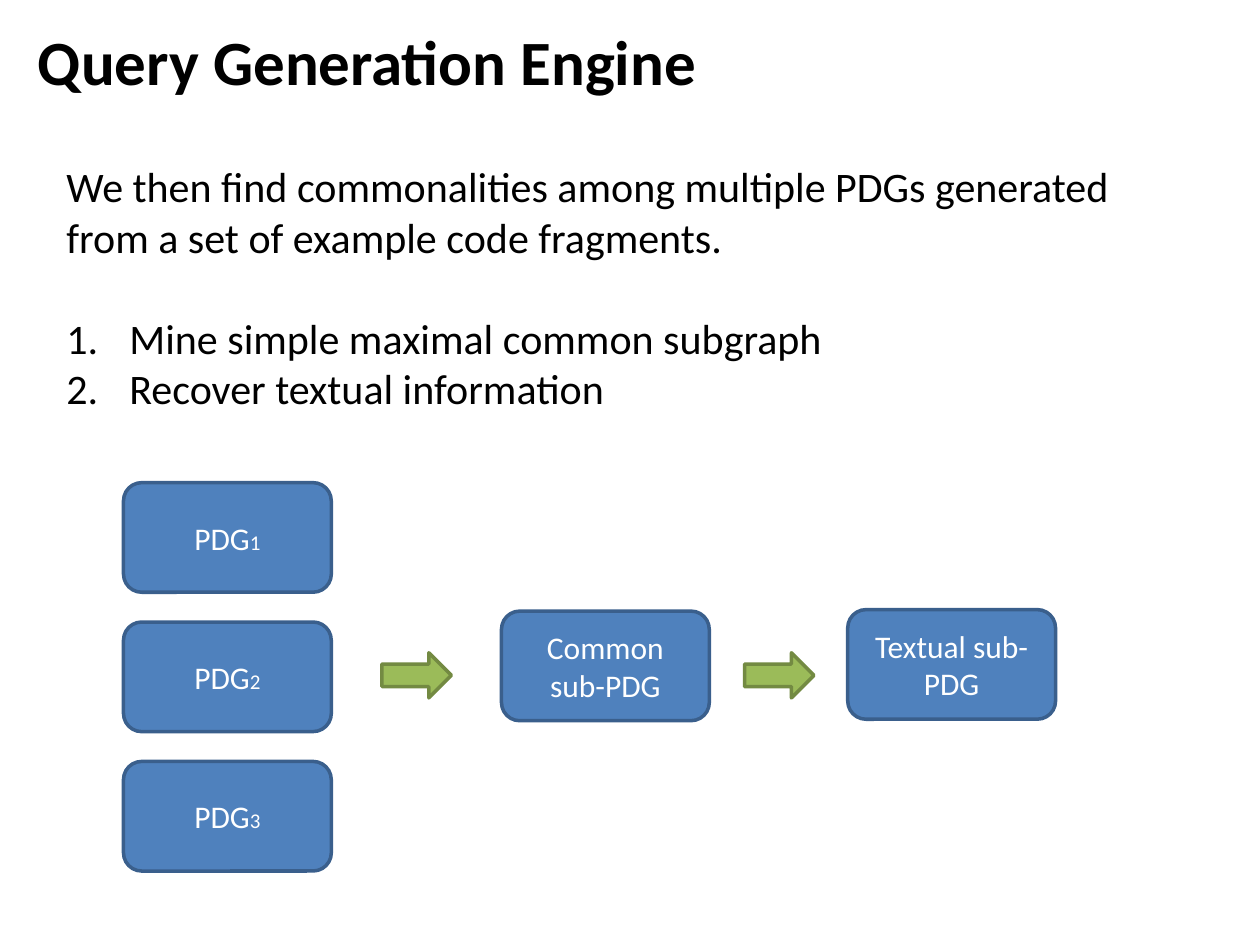
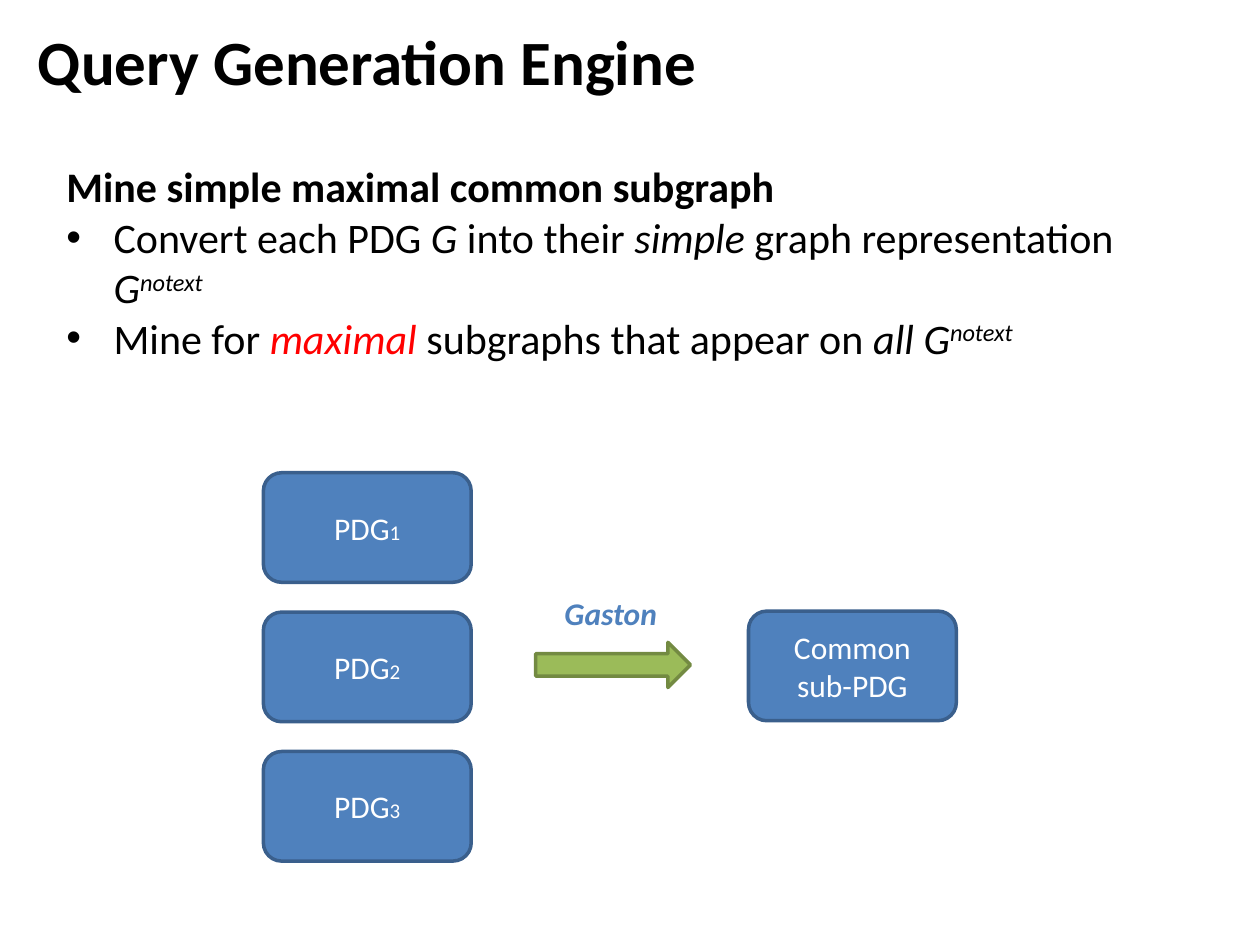
from lxml.etree import SubElement
from pptx import Presentation
from pptx.dml.color import RGBColor
from pptx.enum.shapes import MSO_SHAPE as Shape
from pptx.enum.text import MSO_ANCHOR as Anchor, MSO_AUTO_SIZE as AutoSize, PP_ALIGN as Align
from pptx.oxml.ns import qn
from pptx.util import Cm, Pt

BLACK = RGBColor(0x00, 0x00, 0x00)
WHITE = RGBColor(0xFF, 0xFF, 0xFF)
RED = RGBColor(0xFF, 0x00, 0x00)
BLUE = RGBColor(0x4F, 0x81, 0xBD)
BLUE_EDGE = RGBColor(0x3A, 0x5F, 0x8C)
GREEN = RGBColor(0x9B, 0xBB, 0x59)
GREEN_EDGE = RGBColor(0x73, 0x8A, 0x42)

FONT = "Calibri"
BLOCK_WIDTH, BLOCK_HEIGHT, BLOCK_PITCH = 4.19, 2.21, 2.81
ARROW_HEIGHT = 0.91


def add_block(page, kind, left, top, width, height, fill, edge, spans=()):
    """Add an outlined shape with centred white text; spans are (text, size)."""
    block = page.shapes.add_shape(kind, Cm(left), Cm(top), Cm(width), Cm(height))
    block.shadow.inherit = False
    block.fill.solid()
    block.fill.fore_color.rgb = fill
    block.line.color.rgb = edge
    block.line.width = Pt(2)
    block.text_frame.vertical_anchor = Anchor.MIDDLE
    para = block.text_frame.paragraphs[0]
    para.alignment = Align.CENTER
    para.font.name = FONT
    para.font.color.rgb = WHITE
    for text, size in spans:
        span = para.add_run()
        span.text = text
        span.font.size = Pt(size)


def add_paragraphs(box, size, color, paragraphs):
    """Fill a box; each paragraph is (spans, bullet, indent, space after, bold)."""
    frame = box.text_frame
    for index, (spans, bullet, indent, space_after, bold) in enumerate(paragraphs):
        para = frame.add_paragraph() if index else frame.paragraphs[0]
        para.font.name = FONT
        para.font.size = Pt(size)
        para.font.color.rgb = color
        para.font.bold = bold
        para.space_after = Pt(space_after)
        if bullet:
            props = para._p.get_or_add_pPr()
            props.set("marL", str(Cm(indent)))
            props.set("indent", str(-Cm(indent)))
            # Bullet elements come before the default run properties
            if bullet == "number":
                SubElement(props, qn("a:buFont"), typeface="+mj-lt")
                SubElement(props, qn("a:buAutoNum"), type="arabicPeriod")
            else:
                SubElement(props, qn("a:buFont"), typeface="Arial")
                SubElement(props, qn("a:buChar"), char=bullet)
            props.append(props.find(qn("a:defRPr")))
        for text, style in spans:
            span = para.add_run()
            span.text = text
            if style != "plain":
                span.font.italic = True
            if style == "red":
                span.font.color.rgb = RED
            if style == "raised":
                span.font._element.set("baseline", "30000")


deck = Presentation()
deck.slide_width, deck.slide_height = Cm(25.4), Cm(19.05)

# Body text: width, height, paragraphs
overview = (22.81, 5.38, [
    ([("We then find commonalities among multiple PDGs generated "
       "from a set of example code fragments.", "plain")], None, 0, 29, False),
    ([("Mine simple maximal common subgraph", "plain")], "number", 1.27, 0, False),
    ([("Recover textual information", "plain")], "number", 1.27, 0, False),
])
mining = (22.2, 4.37, [
    ([("Mine simple maximal common subgraph", "plain")], None, 0, 0, True),
    ([("Convert each PDG ", "plain"), ("G ", "italic"), ("into their ", "plain"),
      ("simple ", "italic"), ("graph representation ", "plain"),
      ("G", "italic"), ("notext", "raised")], "•", 0.95, 0, False),
    ([("Mine for ", "plain"), ("maximal ", "red"), ("subgraphs that appear on ", "plain"),
      ("all G", "italic"), ("notext", "raised")], "•", 0.95, 0, False),
])

# Diagrams: PDG column (left, top), results (text, left, top), arrows (left, top, width)
slides = [
    (overview, (2.49, 9.73),
     [("Common sub-PDG", 10.11, 12.32), ("Textual sub-PDG", 17.09, 12.29)],
     [(7.7, 13.16, 1.4), (15.01, 13.16, 1.4)]),
    (mining, (5.31, 9.53),
     [("Common sub-PDG", 15.09, 12.32)],
     [(10.8, 12.95, 3.12)]),
]

for (body_width, body_height, paragraphs), (column_left, column_top), results, arrows in slides:
    page = deck.slides.add_slide(deck.slide_layouts[5])

    # Title
    title = page.shapes.title
    title.left, title.top, title.width, title.height = Cm(0.51), Cm(0.33), Cm(17.81), Cm(1.8)
    title.text_frame.text = "Query Generation Engine"
    title.text_frame.auto_size = AutoSize.NONE
    title.text_frame.vertical_anchor = Anchor.TOP
    para = title.text_frame.paragraphs[0]
    para.alignment = Align.LEFT
    para.font.name = FONT
    para.font.size = Pt(36)
    para.font.bold = True
    para.font.color.rgb = BLACK

    # Body
    body = page.shapes.add_textbox(Cm(1.09), Cm(3.12), Cm(body_width), Cm(body_height))
    body.text_frame.word_wrap = True
    add_paragraphs(body, 24, BLACK, paragraphs)

    # Input graphs
    for row in range(3):
        add_block(page, Shape.ROUNDED_RECTANGLE, column_left, column_top + row * BLOCK_PITCH,
                  BLOCK_WIDTH, BLOCK_HEIGHT, BLUE, BLUE_EDGE, [("PDG", 18), (str(row + 1), 12)])

    # Resulting graphs
    for text, left, top in results:
        add_block(page, Shape.ROUNDED_RECTANGLE, left, top, BLOCK_WIDTH, BLOCK_HEIGHT,
                  BLUE, BLUE_EDGE, [(text, 18)])

    # Steps between them
    for left, top, width in arrows:
        add_block(page, Shape.RIGHT_ARROW, left, top, width, ARROW_HEIGHT, GREEN, GREEN_EDGE)

# Label of the mining step, on the last page
label = page.shapes.add_textbox(Cm(11.13), Cm(11.86), Cm(2.44), Cm(1.02))
label.text_frame.word_wrap = False
add_paragraphs(label, 18, BLUE, [([("Gaston", "italic")], None, 0, 0, True)])

deck.save("out.pptx")
